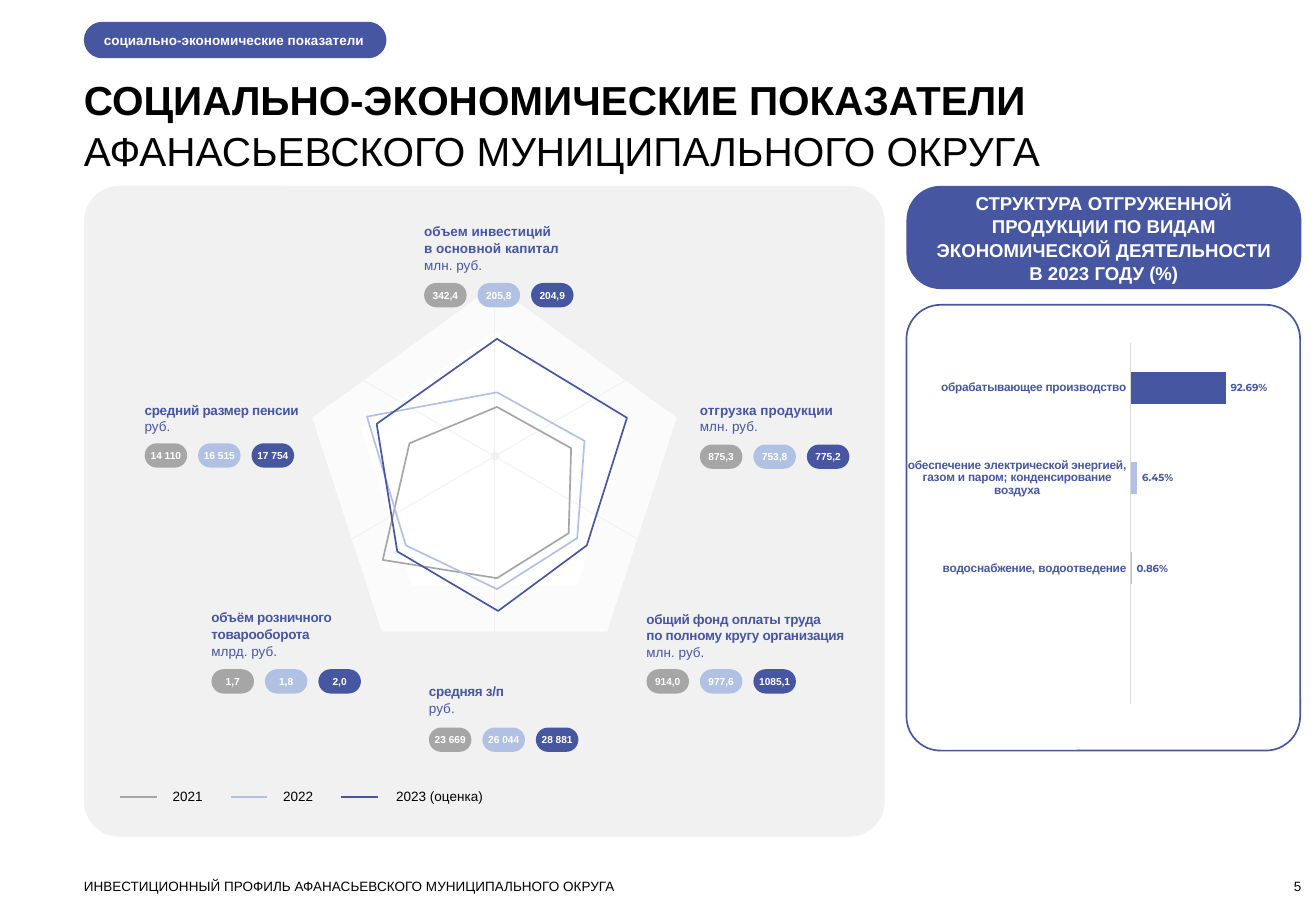
from lxml import etree
from pptx import Presentation
from pptx.chart.data import CategoryChartData
from pptx.dml.color import RGBColor
from pptx.enum.chart import XL_CHART_TYPE, XL_LABEL_POSITION, XL_TICK_MARK
from pptx.enum.shapes import MSO_CONNECTOR, MSO_SHAPE
from pptx.enum.text import MSO_ANCHOR, PP_ALIGN
from pptx.oxml import parse_xml
from pptx.oxml.ns import nsdecls, qn
from pptx.util import Inches, Pt

ROUNDED = MSO_SHAPE.ROUNDED_RECTANGLE
PENTAGON = MSO_SHAPE.REGULAR_PENTAGON
OVAL = MSO_SHAPE.OVAL
STRAIGHT = MSO_CONNECTOR.STRAIGHT
BAR = XL_CHART_TYPE.BAR_CLUSTERED
OUTSIDE_END = XL_LABEL_POSITION.OUTSIDE_END
NO_TICK = XL_TICK_MARK.NONE
TOP, MIDDLE, BOTTOM = MSO_ANCHOR.TOP, MSO_ANCHOR.MIDDLE, MSO_ANCHOR.BOTTOM
LEFT, CENTER, RIGHT = PP_ALIGN.LEFT, PP_ALIGN.CENTER, PP_ALIGN.RIGHT

COLORS = {
    "blue": "4756A0", "light": "B1C1E4", "gray": "A6A6A6", "panel": "F1F1F1",
    "pale": "FBFBFB", "white": "FFFFFF", "black": "000000", "axis": "D9D9D9",
}
YEARS = [("2021", "gray"), ("2022", "light"), ("2023 (оценка)", "blue")]
INDICATORS = [
    (3.49, 1.83, 2.33, 0, ["объем инвестиций", "в основной капитал", "млн. руб."],
     ["342,4", "205,8", "204,9"]),
    (5.76, 3.3, 3.66, 0, ["отгрузка продукции", "млн. руб."],
     ["875,3", "753,8", "775,2"]),
    (5.32, 5.02, 5.51, -20,
     ["общий фонд оплаты труда", "по полному кругу организация", "млн. руб."],
     ["914,0", "977,6", "1085,1"]),
    (1.74, 5.01, 5.51, -20, ["объём розничного", "товарооборота", "млрд. руб."],
     ["1,7", "1,8", "2,0"]),
    (1.19, 3.3, 3.65, -20, ["средний размер пенсии", "руб."],
     ["14 110", "16 515", "17 754"]),
    (3.53, 5.62, 5.99, -20, ["средняя з/п", "руб."],
     ["23 669", "26 044", "28 881"]),
]
RADAR = {
    "gray": [(3.37, 3.65), (4.09, 3.35), (4.7, 3.69), (4.68, 4.39), (4.09, 4.76), (3.15, 4.61)],
    "light": [(3.02, 3.43), (4.09, 3.23), (4.81, 3.63), (4.75, 4.43), (4.09, 4.85), (3.34, 4.49)],
    "blue": [(3.1, 3.49), (4.09, 2.79), (5.16, 3.44), (4.83, 4.49), (4.1, 5.03), (3.27, 4.54)],
}
SPOKES = [(4.07, 2.35, 4.07, 5.21), (5.17, 3.12, 2.89, 4.44), (2.97, 3.12, 5.25, 4.44)]
STRUCTURE = [
    ("", None),
    ("водоснабжение, водоотведение", 0.0086),
    ("обеспечение электрической энергией, газом и паром; конденсирование воздуха", 0.0645),
    ("обрабатывающее производство", 0.9269),
]


class ProfileSlide:
    def __init__(self, page, font="Arial"):
        self.page = page
        self.font = font

    def color(self, name):
        return RGBColor.from_string(COLORS[name])

    def style_font(self, font, size, color, bold=False, name=None):
        font.name = name or self.font
        font.size = Pt(size)
        font.bold = bold
        font.color.rgb = self.color(color)

    def stroke(self, line, color, width=1):
        line.color.rgb = self.color(color)
        line.width = Pt(width)

    def put_text(self, box, lines, size, color, bold=(False,), align=LEFT, anchor=TOP,
                 margin=0, spacing=1, tracking=0):
        frame = box.text_frame
        frame.word_wrap = True
        frame.vertical_anchor = anchor
        frame.margin_left = Inches(margin)
        frame.margin_top = frame.margin_right = frame.margin_bottom = 0
        for index, line in enumerate(lines):
            para = frame.paragraphs[0] if index == 0 else frame.add_paragraph()
            para.alignment = align
            para.line_spacing = spacing
            self.style_font(para.font, size, color, bold[min(index, len(bold) - 1)])
            para.text = line
            if tracking and index < len(lines) - 1:
                para.runs[0]._r.get_or_add_rPr().set("spc", str(tracking))

    def text(self, x, y, width, height, lines, size=8, color="black", **options):
        box = self.page.shapes.add_textbox(*map(Inches, (x, y, width, height)))
        self.put_text(box, lines, size, color, **options)

    def shape(self, kind, x, y, width, height, fill=None, line=None, radius=None):
        box = self.page.shapes.add_shape(kind, *map(Inches, (x, y, width, height)))
        self.finish(box, fill, line)
        if radius is not None:
            box.adjustments[0] = radius
        return box

    def finish(self, box, fill, line):
        box.shadow.inherit = False
        if fill:
            box.fill.solid()
            box.fill.fore_color.rgb = self.color(fill)
        else:
            box.fill.background()
        if line:
            self.stroke(box.line, line)
        else:
            box.line.fill.background()

    def line(self, x1, y1, x2, y2, color, width=1):
        link = self.page.shapes.add_connector(STRAIGHT, *map(Inches, (x1, y1, x2, y2)))
        self.stroke(link.line, color, width)
        etree.SubElement(link._element.spPr, qn("a:effectLst"))

    def outline(self, points, color):
        corners = [(Inches(x), Inches(y)) for x, y in points]
        builder = self.page.shapes.build_freeform(*corners[0])
        builder.add_line_segments(corners[1:], close=True)
        self.finish(builder.convert_to_shape(), None, color)

    def indicator(self, x, y, pill_y, tracking, lines, values):
        bold = [True] * (len(lines) - 1) + [False]
        self.text(x, y, 1.71, 0.13 * len(lines), lines, color="blue", bold=bold,
                  spacing=1.05, tracking=tracking)
        for index, (value, (_, color)) in enumerate(zip(values, YEARS)):
            pill = self.shape(ROUNDED, x + 0.44 * index, pill_y, 0.35, 0.2, color, radius=0.5)
            self.put_text(pill, [value], 6, "white", bold=[True], align=CENTER, anchor=MIDDLE)

    def bar_chart(self, x, y, width, height, rows):
        data = CategoryChartData(number_format="0.00%")
        data.categories = [name for name, _ in rows]
        data.add_series("Series 1", [value for _, value in rows])
        chart = self.page.shapes.add_chart(
            BAR, *map(Inches, (x, y, width, height)), data).chart
        chart.has_legend = chart.has_title = False
        self.style_font(chart.font, 10, "black", name="Calibri")

        axis = chart.category_axis
        axis.major_tick_mark = NO_TICK
        axis.has_major_gridlines = False
        self.style_font(axis.tick_labels.font, 7, "blue", True)
        self.stroke(axis.format.line, "axis", 0.75)
        scale = chart.value_axis
        scale.visible = scale.has_major_gridlines = False
        scale.minimum_scale, scale.maximum_scale = 0, 1

        plot = chart.plots[0]
        plot.gap_width = 182
        plot.vary_by_categories = False
        series = plot.series[0]
        for target, color in ((series, "light"), (series.points[3], "blue")):
            target.format.fill.solid()
            target.format.fill.fore_color.rgb = self.color(color)
        labels = series.data_labels
        labels.show_value = True
        labels.position = OUTSIDE_END
        labels.number_format = "0.00%"
        labels.number_format_is_linked = False
        self.style_font(labels.font, 6, "blue", True, "Montserrat")

        area = chart._chartSpace.chart.plotArea
        for layout in area.findall(qn("c:layout")):
            area.remove(layout)
        area.insert(0, parse_xml(
            f'<c:layout {nsdecls("c")}><c:manualLayout><c:layoutTarget val="inner"/>'
            '<c:xMode val="edge"/><c:yMode val="edge"/><c:x val="0.57"/><c:y val="0.09"/>'
            '<c:w val="0.26"/><c:h val="0.83"/></c:manualLayout></c:layout>'))


def main():
    deck = Presentation()
    deck.slide_width, deck.slide_height = Inches(10.83), Inches(7.5)
    slide = ProfileSlide(deck.slides.add_slide(deck.slide_layouts[6]))

    tag = slide.shape(ROUNDED, 0.69, 0.18, 2.49, 0.3, "blue", radius=0.5)
    slide.put_text(tag, ["социально-экономические показатели"], 8, "white", bold=[True],
                   anchor=MIDDLE, margin=0.12)
    slide.text(0.69, 0.6, 9.65, 0.81,
               ["СОЦИАЛЬНО-ЭКОНОМИЧЕСКИЕ ПОКАЗАТЕЛИ", "АФАНАСЬЕВСКОГО МУНИЦИПАЛЬНОГО ОКРУГА"],
               24, bold=[True, False], spacing=1.05)

    slide.shape(ROUNDED, 0.69, 1.53, 6.59, 5.36, "panel", radius=0.055)
    header = slide.shape(ROUNDED, 7.46, 1.53, 3.25, 0.85, "blue", radius=0.33)
    slide.put_text(header, ["СТРУКТУРА ОТГРУЖЕННОЙ\vПРОДУКЦИИ ПО ВИДАМ\v"
                            "ЭКОНОМИЧЕСКОЙ ДЕЯТЕЛЬНОСТИ\vВ 2023 ГОДУ (%)"],
                   11, "white", bold=[True], align=CENTER, anchor=MIDDLE, spacing=1.05)
    slide.shape(ROUNDED, 7.46, 2.51, 3.24, 3.67, line="blue", radius=0.087)
    slide.bar_chart(7.46, 2.5, 3.24, 3.58, STRUCTURE)

    for index, (year, color) in enumerate(YEARS):
        x = 0.99 + 0.91 * index
        slide.line(x, 6.56, x + 0.3, 6.56, color)
        slide.text(x + (0.45 if index == 2 else 0.43), 6.49, 0.86, 0.13, [year])

    slide.shape(PENTAGON, 2.57, 2.35, 3, 2.85, "pale")
    slide.shape(PENTAGON, 2.97, 2.73, 2.2, 2.09, "white")
    for spoke in SPOKES:
        slide.line(*spoke, "panel", 0.5)
    slide.shape(OVAL, 4.04, 3.72, 0.07, 0.07, "panel")
    for indicator in INDICATORS:
        slide.indicator(*indicator)
    for color, points in RADAR.items():
        slide.outline(points, color)

    slide.text(0.69, 7.23, 8, 0.13,
               ["ИНВЕСТИЦИОННЫЙ ПРОФИЛЬ АФАНАСЬЕВСКОГО МУНИЦИПАЛЬНОГО ОКРУГА"])
    slide.text(9.91, 7.23, 0.8, 0.13, ["5"], align=RIGHT, anchor=BOTTOM)
    deck.save("out.pptx")


if __name__ == "__main__":
    main()
